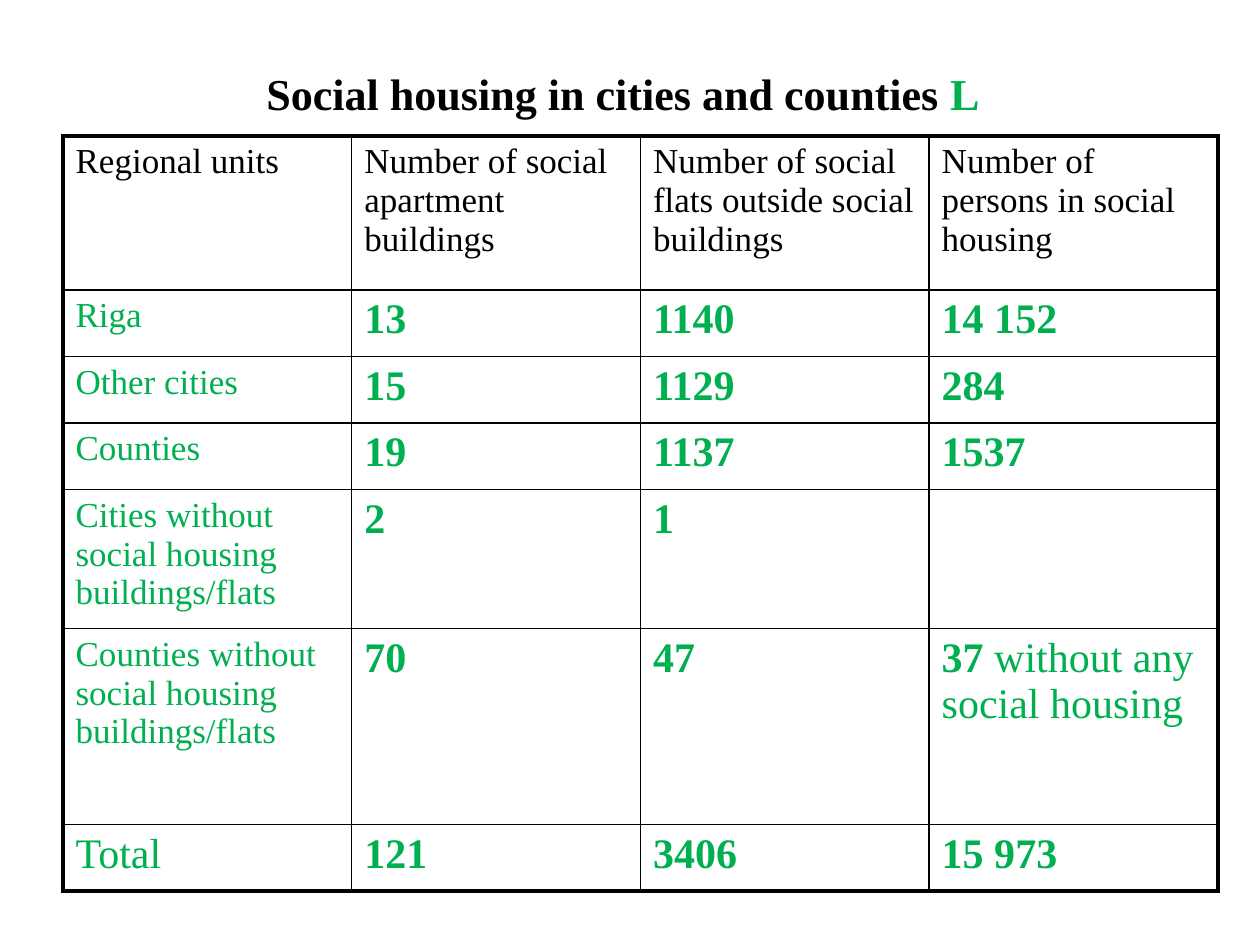
from lxml import etree
from pptx import Presentation
from pptx.dml.color import RGBColor
from pptx.enum.text import MSO_ANCHOR, PP_ALIGN
from pptx.oxml.ns import qn
from pptx.util import Pt

MIDDLE = MSO_ANCHOR.MIDDLE
CENTER = PP_ALIGN.CENTER
FONT = "Times New Roman"
COLORS = {"black": "000000", "green": "00B050"}


def add_run(paragraph, text, size, color, bold=False):
    run = paragraph.add_run()
    run.text = text
    run.font.name = FONT
    run.font.size = Pt(size)
    run.font.bold = bold
    run.font.color.rgb = RGBColor.from_string(COLORS[color])


def add_border(cell, side, width):
    line = etree.SubElement(cell._tc.get_or_add_tcPr(), qn(f"a:ln{side}"), w=str(Pt(width)))
    fill = etree.SubElement(line, qn("a:solidFill"))
    etree.SubElement(fill, qn("a:srgbClr"), val=COLORS["black"])


presentation = Presentation()
presentation.slide_width = Pt(720)
presentation.slide_height = Pt(540)
slide = presentation.slides.add_slide(presentation.slide_layouts[6])

# Title
title = slide.shapes.add_textbox(Pt(36), Pt(21.6), Pt(648), Pt(50.4))
frame = title.text_frame
frame.word_wrap = True
frame.vertical_anchor = MIDDLE
frame.margin_top = Pt(16.4)
frame.margin_right = Pt(15.2)
paragraph = frame.paragraphs[0]
paragraph.alignment = CENTER
add_run(paragraph, "Social housing in cities and counties ", 25.2, "black", True)
add_run(paragraph, "L", 25.2, "green", True)

# Table contents
header = ["Regional units", "Number of social apartment buildings",
          "Number of social flats outside social buildings",
          "Number of persons in social housing"]
body = [
    ["Riga", "13", "1140", "14 152"],
    ["Other cities", "15", "1129", "284"],
    ["Counties", "19", "1137", "1537"],
    ["Cities without social housing buildings/flats", "2", "1", ""],
    ["Counties without social housing buildings/flats", "70", "47", "37 "],
    ["Total", "121", "3406", "15 973"],
]
rows = [header] + body
row_heights = [88, 38, 38, 38, 79.5, 112, 38]
last_row, last_column = len(rows) - 1, len(header) - 1

# Table grid
table = slide.shapes.add_table(len(rows), len(header), Pt(36), Pt(77.8),
                               Pt(660), Pt(sum(row_heights))).table
table.first_row = False
table.horz_banding = False
for column in table.columns:
    column.width = Pt(165)

# Cells: thick outer frame, thin inner lines
for row_index, texts in enumerate(rows):
    table.rows[row_index].height = Pt(row_heights[row_index])
    for column_index, text in enumerate(texts):
        cell = table.cell(row_index, column_index)
        outer_sides = {"L": column_index == 0, "R": column_index == last_column,
                       "T": row_index == 0, "B": row_index == last_row}
        for side, is_outer in outer_sides.items():
            add_border(cell, side, 2.25 if is_outer else 1)
        cell.fill.background()
        if text:
            is_number = row_index > 0 and column_index > 0
            size = 24 if is_number or row_index == last_row else 20
            color = "green" if row_index else "black"
            add_run(cell.text_frame.paragraphs[0], text, size, color, is_number)

# Remark beside the number of counties
remark_cell = table.cell(5, last_column)
add_run(remark_cell.text_frame.paragraphs[0], "without any social housing", 24, "green")

presentation.save("out.pptx")
